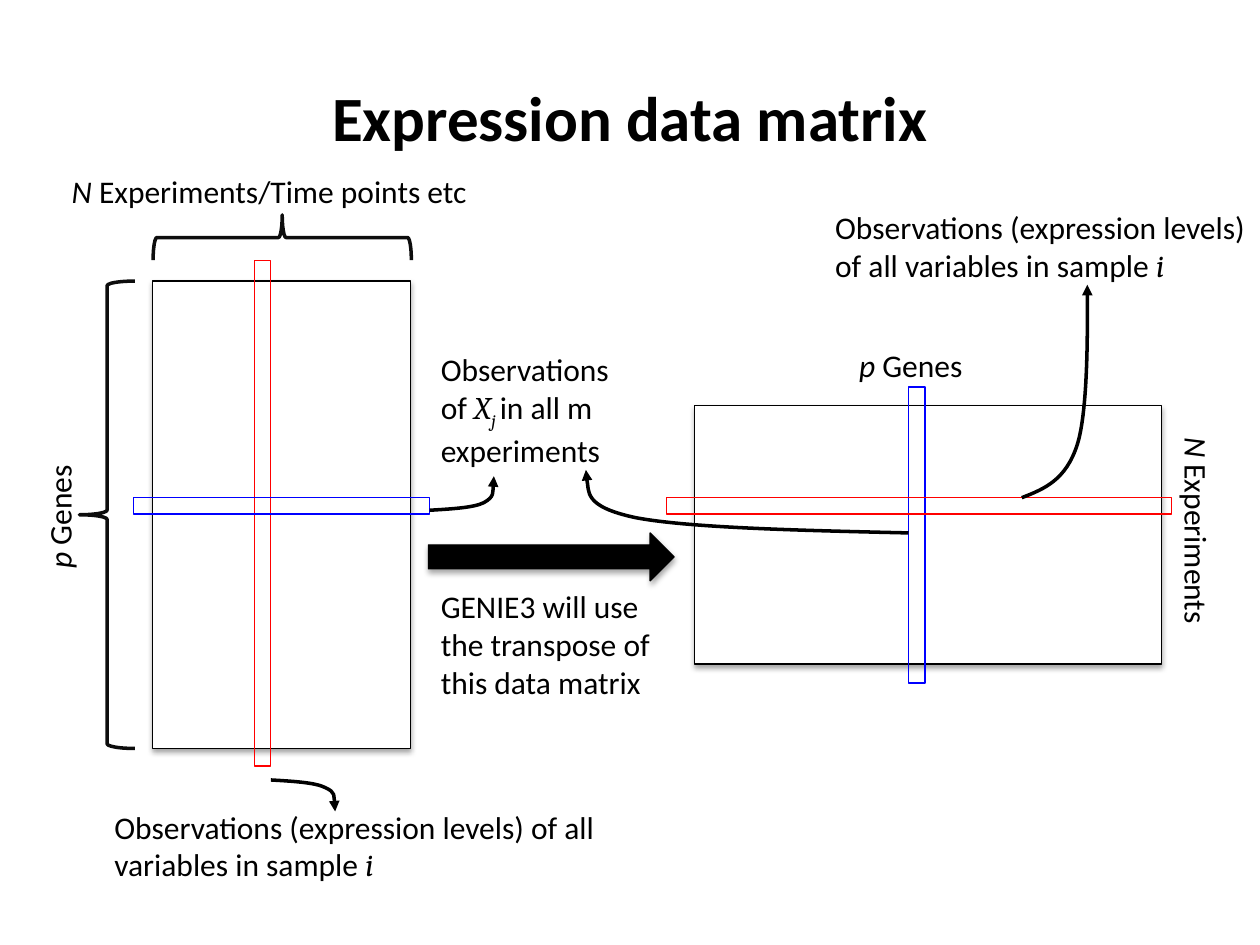
import pptx
import pptx.util
import pptx.dml.color
import pptx.enum.shapes
import pptx.enum.text
import pptx.oxml
import pptx.oxml.ns
from pptx.util import Inches

SHAPE = pptx.enum.shapes.MSO_SHAPE
ANCHOR = pptx.enum.text.MSO_ANCHOR
ALIGN = pptx.enum.text.PP_ALIGN
FIT = pptx.enum.text.MSO_AUTO_SIZE

THEME = {
    "ink": "000000", "brace": "0D0D0D", "paper": "FFFFFF",
    "sample": "FF0000", "gene": "0000FF",
    "body_font": "Calibri", "math_font": "Cambria",
    "title_size": 36, "body_size": 18, "thin": 0.75, "thick": 2,
}

TITLE = "Expression data matrix"
SAMPLE_NOTE = [("Observations (expression levels) of all variables in sample ", ""), ("i", "math")]
GENE_COUNT = [("p", "italic"), (" Genes", "")]

LABELS = [
    ((-0.06, 3.88, 1.06, 0.4), 270, False, GENE_COUNT),
    ((0.47, 1.32, 3.42, 0.4), 0, False, [("N", "italic"), (" Experiments/Time points etc", "")]),
    ((0.81, 6.36, 4.84, 0.71), 0, True, SAMPLE_NOTE),
    ((3.4, 2.73, 1.65, 1.01), 0, True,
     [("Observations of ", ""), ("X", "math"), ("j ", "math sub"), ("in all m experiments", "")]),
    ((3.4, 4.61, 2.1, 1.01), 0, True, [("GENIE3 will use the transpose of this data matrix", "")]),
    ((8.64, 4.03, 1.72, 0.4), 90, False, [("N ", "italic"), ("Experiments", "")]),
    ((6.72, 2.7, 1.06, 0.4), 0, False, GENE_COUNT),
    ((6.53, 1.6, 3.67, 0.71), 0, True, SAMPLE_NOTE),
]

MATRIX_SIZE = (2.05, 3.71)
SAMPLE_SIZE = (0.13, 4.01)
GENE_SIZE = (0.13, 2.35)

MATRICES = [((1.21, 2.23), MATRIX_SIZE, 0), ((6.34, 2.39), MATRIX_SIZE, 90)]
BARS = [
    ((2.02, 2.07), SAMPLE_SIZE, 0, "sample"),
    ((2.17, 2.84), GENE_SIZE, 90, "gene"),
    ((7.21, 3.07), GENE_SIZE, 180, "gene"),
    ((7.23, 2.01), SAMPLE_SIZE, 90, "sample"),
]
BRACES = [((2.06, 0.86), (0.36, 2.05), 270), ((0.63, 2.23), (0.44, 3.71), 180)]
TRANSPOSE_ARROW = ((3.4, 4.23), (1.95, 0.38))

CURVES = [
    [(2.15, 6.19), (2.32, 6.2), (2.5, 6.21), (2.58, 6.25), (2.67, 6.29), (2.66, 6.44), (2.66, 6.44)],
    [(3.41, 4.05), (3.58, 4.04), (3.76, 4.03), (3.84, 3.99), (3.93, 3.94), (3.92, 3.78), (3.92, 3.78)],
    [(7.21, 4.23), (6.34, 4.21), (5.48, 4.19), (5.05, 4.11), (4.62, 4.02), (4.65, 3.73), (4.65, 3.73)],
    [(8.11, 3.95), (8.29, 3.88), (8.46, 3.81), (8.55, 3.53), (8.64, 3.25), (8.63, 2.26), (8.63, 2.26)],
]

SHADOW = (
    '<a:outerShdw %s blurRad="40000" dist="23000" dir="5400000" rotWithShape="0">'
    '<a:srgbClr val="000000"><a:alpha val="35000"/></a:srgbClr></a:outerShdw>'
    % pptx.oxml.ns.nsdecls("a")
)


def color(role):
    return pptx.dml.color.RGBColor.from_string(THEME[role])


def paint(shape, line, width, fill=None, shadow=False):
    shape.shadow.inherit = False
    if fill:
        shape.fill.solid()
        shape.fill.fore_color.rgb = color(fill)
    else:
        shape.fill.background()
    shape.line.color.rgb = color(line)
    shape.line.width = pptx.util.Pt(THEME[width])
    if shadow:
        effects = shape._element.spPr.find(pptx.oxml.ns.qn("a:effectLst"))
        effects.append(pptx.oxml.parse_xml(SHADOW))


def add_block(slide, preset, corner, size, rotation=0):
    block = slide.shapes.add_shape(preset, *map(Inches, corner + size))
    block.rotation = rotation
    return block


def add_label(slide, place, rotation, wrap, runs, size="body_size"):
    label = slide.shapes.add_textbox(*map(Inches, place))
    label.rotation = rotation
    frame = label.text_frame
    frame.word_wrap = wrap
    frame.auto_size = FIT.SHAPE_TO_FIT_TEXT
    for text, style in runs:
        run = frame.paragraphs[0].add_run()
        run.text = text
        font = run.font
        font.name = THEME["math_font" if "math" in style else "body_font"]
        font.size = pptx.util.Pt(THEME[size])
        font.color.rgb = color("ink")
        font.italic = "math" in style or "italic" in style
        font.bold = "bold" in style
        if "sub" in style:
            run._r.get_or_add_rPr().set("baseline", "-25000")
    return frame


def add_curve(slide, points):
    start, *controls = [(Inches(x), Inches(y)) for x, y in points]
    builder = slide.shapes.build_freeform(*start)
    builder.add_line_segments(controls, close=False)
    curve = builder.convert_to_shape()
    segments = curve._element.xpath(".//a:lnTo")
    for first in range(0, len(segments), 3):
        bezier = pptx.oxml.parse_xml("<a:cubicBezTo %s/>" % pptx.oxml.ns.nsdecls("a"))
        segments[first].addprevious(bezier)
        for segment in segments[first:first + 3]:
            bezier.append(segment[0])
            segment.getparent().remove(segment)
    paint(curve, "ink", "thick")
    curve.line._get_or_add_ln().append(
        pptx.oxml.parse_xml('<a:tailEnd %s type="triangle"/>' % pptx.oxml.ns.nsdecls("a")))


def main():
    deck = pptx.Presentation()
    deck.slide_width, deck.slide_height = Inches(10), Inches(7.5)
    slide = deck.slides.add_slide(deck.slide_layouts[6])

    heading = add_label(slide, (0.5, 0.3, 9, 1.25), 0, True, [(TITLE, "bold")], "title_size")
    heading.auto_size = FIT.NONE
    heading.vertical_anchor = ANCHOR.MIDDLE
    heading.paragraphs[0].alignment = ALIGN.CENTER

    for corner, size, rotation in MATRICES:
        matrix = add_block(slide, SHAPE.RECTANGLE, corner, size, rotation)
        paint(matrix, "ink", "thin", "paper", True)
    for corner, size, rotation, role in BARS:
        paint(add_block(slide, SHAPE.RECTANGLE, corner, size, rotation), role, "thin")
    for corner, size, rotation in BRACES:
        paint(add_block(slide, SHAPE.RIGHT_BRACE, corner, size, rotation), "brace", "thick")
    paint(add_block(slide, SHAPE.RIGHT_ARROW, *TRANSPOSE_ARROW), "ink", "thin", "ink", True)
    for points in CURVES:
        add_curve(slide, points)
    for label in LABELS:
        add_label(slide, *label)

    deck.save("out.pptx")


if __name__ == "__main__":
    main()
